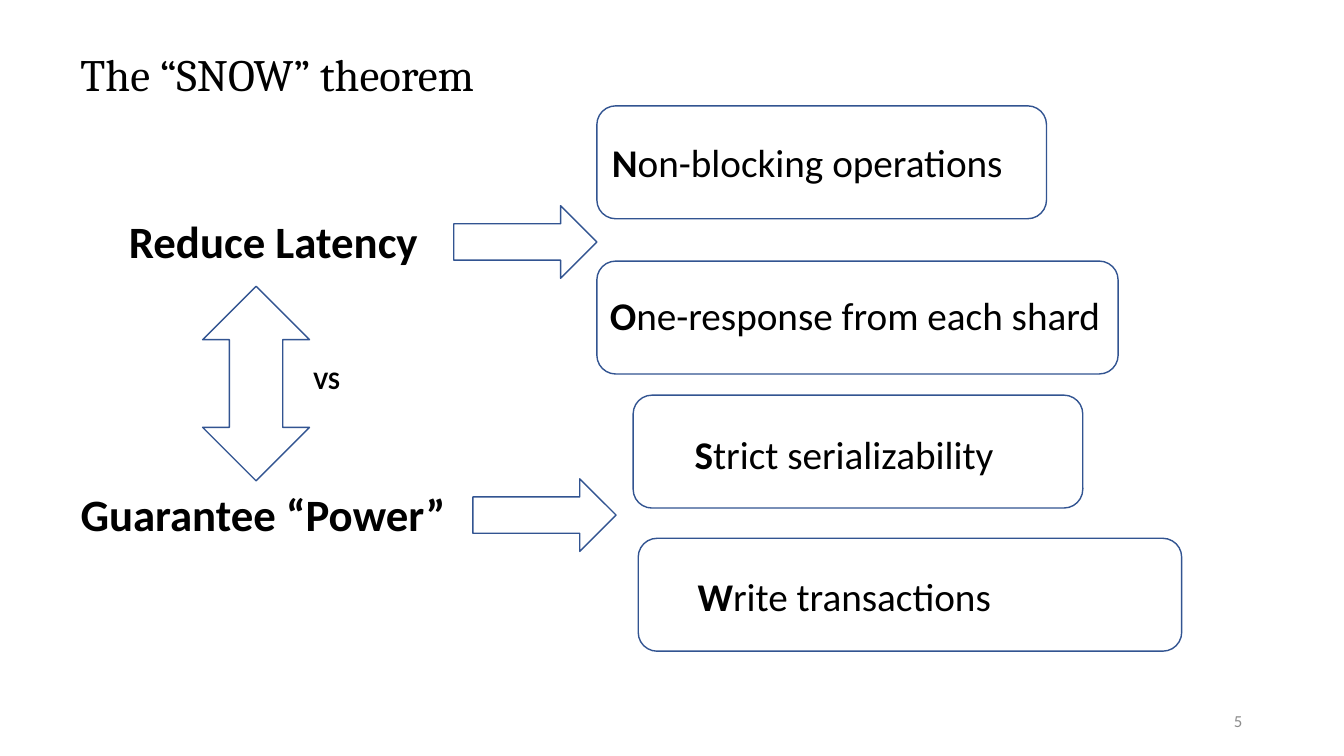
"""Build the SNOW theorem slide: latency goals set against power guarantees."""
import dataclasses

import pptx
import pptx.dml.color
import pptx.enum.shapes
import pptx.enum.text
import pptx.util

Inches = pptx.util.Inches
Pt = pptx.util.Pt
RGB = pptx.dml.color.RGBColor
Shape = pptx.enum.shapes.MSO_SHAPE
Align = pptx.enum.text.PP_ALIGN
Anchor = pptx.enum.text.MSO_ANCHOR
AutoSize = pptx.enum.text.MSO_AUTO_SIZE


@dataclasses.dataclass(frozen=True)
class Theme:
    heading_font: str = "Cambria"
    body_font: str = "Calibri"
    ink: RGB = RGB(0x00, 0x00, 0x00)
    outline: RGB = RGB(0x32, 0x54, 0x91)
    muted: RGB = RGB(0x8C, 0x8C, 0x8C)
    heading_size: int = 32
    property_size: int = 28
    versus_size: int = 18
    number_size: int = 12
    line_width: int = 1


theme = Theme()
presentation = pptx.Presentation()
presentation.slide_width = Inches(13.33)
presentation.slide_height = Inches(7.5)
slide = presentation.slides.add_slide(presentation.slide_layouts[6])


def add_outline(kind, left, top, width, height):
    shape = slide.shapes.add_shape(kind, Inches(left), Inches(top), Inches(width), Inches(height))
    shape.shadow.inherit = False
    shape.fill.background()
    shape.line.color.rgb = theme.outline
    shape.line.width = Pt(theme.line_width)


def add_text(text, left, top, width, height, size, bold=False, wrap=True,
             font=theme.body_font, color=theme.ink):
    box = slide.shapes.add_textbox(Inches(left), Inches(top), Inches(width), Inches(height))
    box.text_frame.word_wrap = wrap
    box.text_frame.auto_size = AutoSize.SHAPE_TO_FIT_TEXT
    paragraph = box.text_frame.paragraphs[0]
    paragraph.add_run().text = text
    paragraph.font.name = font
    paragraph.font.size = Pt(size)
    paragraph.font.bold = bold
    paragraph.font.color.rgb = color
    return box


add_text("The “SNOW” theorem", 0.7, 0.41, 4.74, 0.64, theme.heading_size, font=theme.heading_font)

goals = [
    ("Reduce Latency", 1.18, 2.07, 4.5),
    ("Guarantee “Power”", 0.7, 4.78, 4.69),
]
for goal, left, top, arrow_left in goals:
    add_text(goal, left, top, 7.59, 0.64, theme.heading_size, bold=True)
    add_outline(Shape.RIGHT_ARROW, arrow_left, top - 0.03, 1.42, 0.72)

add_outline(Shape.UP_DOWN_ARROW, 2.01, 2.84, 1.06, 1.93)
add_text("VS", 3.01, 3.57, 0.47, 0.4, theme.versus_size, bold=True, wrap=False)

properties = [
    ("N", "on-blocking operations", (5.92, 1.05, 4.46), (5.97, 1.32, 4.12)),
    ("O", "ne-response from each shard", (5.92, 2.59, 5.17), (5.95, 2.84, 5.11)),
    ("S", "trict serializability", (6.28, 3.92, 4.46), (6.79, 4.22, 3.19)),
    ("W", "rite transactions", (6.33, 5.34, 5.39), (6.82, 5.63, 3.13)),
]
for initial, remainder, frame, label in properties:
    add_outline(Shape.ROUNDED_RECTANGLE, *frame, 1.12)
    box = add_text(initial, *label, 0.57, theme.property_size, wrap=False)
    paragraph = box.text_frame.paragraphs[0]
    paragraph.runs[0].font.bold = True
    paragraph.add_run().text = remainder

number = add_text("5", 9.42, 6.95, 3, 0.4, theme.number_size, color=theme.muted)
number.text_frame.auto_size = AutoSize.NONE
number.text_frame.vertical_anchor = Anchor.MIDDLE
number.text_frame.paragraphs[0].alignment = Align.RIGHT

presentation.save("out.pptx")
